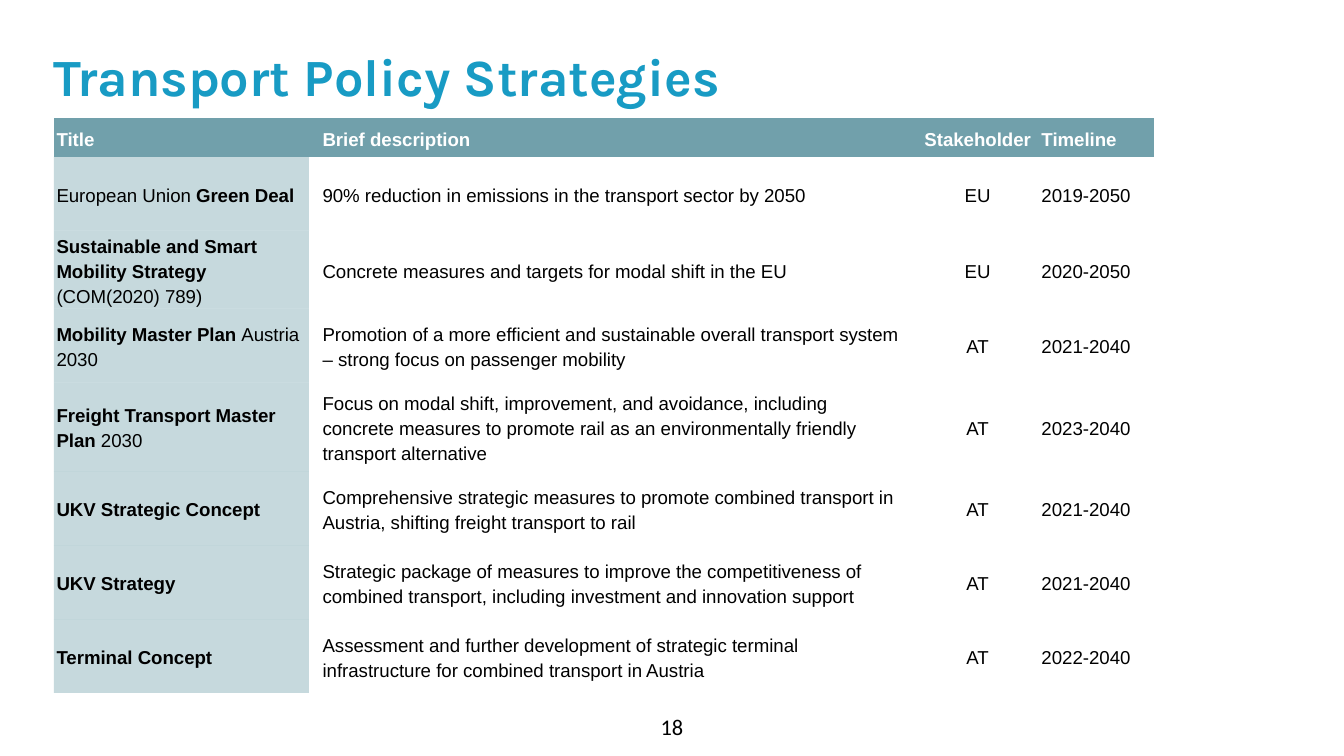
from lxml import etree
from pptx import Presentation
from pptx.dml.color import RGBColor
from pptx.enum import text as t
from pptx.oxml import ns
from pptx.util import Pt

TEAL, WHITE, BLACK, BLUE = "71A0AB", "FFFFFF", "000000", "189BC4"
NO_STYLE = "{2D5ABB26-0587-4C30-8999-92F81FD0307C}"
LEFT = 28.8
COL_WIDTHS = [136.8, 325.4, 65.5, 61.9]
ROW_HEIGHTS = [20.4, 39.6, 41, 39.6, 47.6, 39.6, 39.6, 39.6]
DESCRIPTION_COL, STAKEHOLDER_COL = 1, 2
# Text between ** marks is bold.
ROWS = [
    ("**Title**", "**Brief description**", "**Stakeholder**", "**Timeline**"),
    ("European Union **Green Deal**",
     "90% reduction in emissions in the transport sector by 2050",
     "EU", "2019-2050"),
    ("**Sustainable and Smart Mobility Strategy **(COM(2020) 789)",
     "Concrete measures and targets for modal shift in the EU",
     "EU", "2020-2050"),
    ("**Mobility Master Plan **Austria 2030",
     "Promotion of a more efficient and sustainable overall transport system "
     "– strong focus on passenger mobility",
     "AT", "2021-2040"),
    ("**Freight Transport Master Plan **2030",
     "Focus on modal shift, improvement, and avoidance, including concrete "
     "measures to promote rail as an environmentally friendly transport alternative",
     "AT", "2023-2040"),
    ("**UKV Strategic Concept**",
     "Comprehensive strategic measures to promote combined transport in "
     "Austria, shifting freight transport to rail",
     "AT", "2021-2040"),
    ("**UKV Strategy**",
     "Strategic package of measures to improve the competitiveness of "
     "combined transport, including investment and innovation support",
     "AT", "2021-2040"),
    ("**Terminal Concept**",
     "Assessment and further development of strategic terminal "
     "infrastructure for combined transport in Austria",
     "AT", "2022-2040"),
]


def set_color(color_format, value):
    color_format.rgb = RGBColor.from_string(value)


def set_font(font, name, size, color):
    font.name, font.size = name, Pt(size)
    set_color(font.color, color)


def set_margins(box, x, y):
    box.margin_left = box.margin_right = Pt(x)
    box.margin_top = box.margin_bottom = Pt(y)


def fill_cell(cell, color, opacity=100):
    cell.fill.solid()
    set_color(cell.fill.fore_color, color)
    if opacity < 100:
        srgb = cell._tc.tcPr.find(".//" + ns.qn("a:srgbClr"))
        etree.SubElement(srgb, ns.qn("a:alpha")).set("val", str(opacity * 1000))


def write_cell(cell, marked_text, color, align):
    cell.vertical_anchor = t.MSO_ANCHOR.MIDDLE
    p = cell.text_frame.paragraphs[0]
    p.alignment, p.line_spacing = align, 1.2
    for i, part in enumerate(marked_text.split("**")):
        if part:
            r = p.add_run()
            r.text = part
            r.font.bold = i % 2 == 1
    set_font(p.font, "Arial", 10, color)


def add_title(s, title):
    sp = s.shapes.title
    sp.left, sp.top, sp.width, sp.height = Pt(LEFT), Pt(28), Pt(543.6), Pt(54)
    tf = sp.text_frame
    tf.text = title
    tf.vertical_anchor = t.MSO_ANCHOR.TOP
    set_margins(tf, 0, 0)
    p = tf.paragraphs[0]
    p.alignment, p.line_spacing = t.PP_ALIGN.LEFT, Pt(29.2)
    set_font(p.font, "Karla", 28, BLUE)
    p.font.bold = True


def add_strategy_table(s):
    table = s.shapes.add_table(
        len(ROWS), len(COL_WIDTHS), Pt(LEFT), Pt(63.4),
        Pt(sum(COL_WIDTHS)), Pt(sum(ROW_HEIGHTS))).table
    table.horz_banding = False
    table._tbl.tblPr.find(ns.qn("a:tableStyleId")).text = NO_STYLE
    for column, width in zip(table.columns, COL_WIDTHS):
        column.width = Pt(width)
    for i, (row, height, texts) in enumerate(zip(table.rows, ROW_HEIGHTS, ROWS)):
        row.height = Pt(height)
        for j, (cell, value) in enumerate(zip(row.cells, texts)):
            if j != DESCRIPTION_COL:
                set_margins(cell, 1.5, 0.75)
            if i == 0:
                fill_cell(cell, TEAL)
            elif j == 0:
                fill_cell(cell, TEAL, opacity=40)
            else:
                fill_cell(cell, WHITE)
            align = t.PP_ALIGN.CENTER if j == STAKEHOLDER_COL else t.PP_ALIGN.LEFT
            write_cell(cell, value, BLACK if i else WHITE, align)


def add_page_number(s, number):
    tf = s.shapes.add_textbox(Pt(0), Pt(378.7), Pt(720), Pt(21.6)).text_frame
    tf.word_wrap = True
    tf.text = number
    p = tf.paragraphs[0]
    p.alignment = t.PP_ALIGN.CENTER
    set_font(p.font, "Calibri", 12, BLACK)


def main():
    prs = Presentation()
    prs.slide_width, prs.slide_height = Pt(720), Pt(405)
    s = prs.slides.add_slide(prs.slide_layouts.get_by_name("Title Only"))
    add_title(s, "Transport Policy Strategies")
    add_strategy_table(s)
    add_page_number(s, "18")
    prs.save("out.pptx")


if __name__ == "__main__":
    main()
